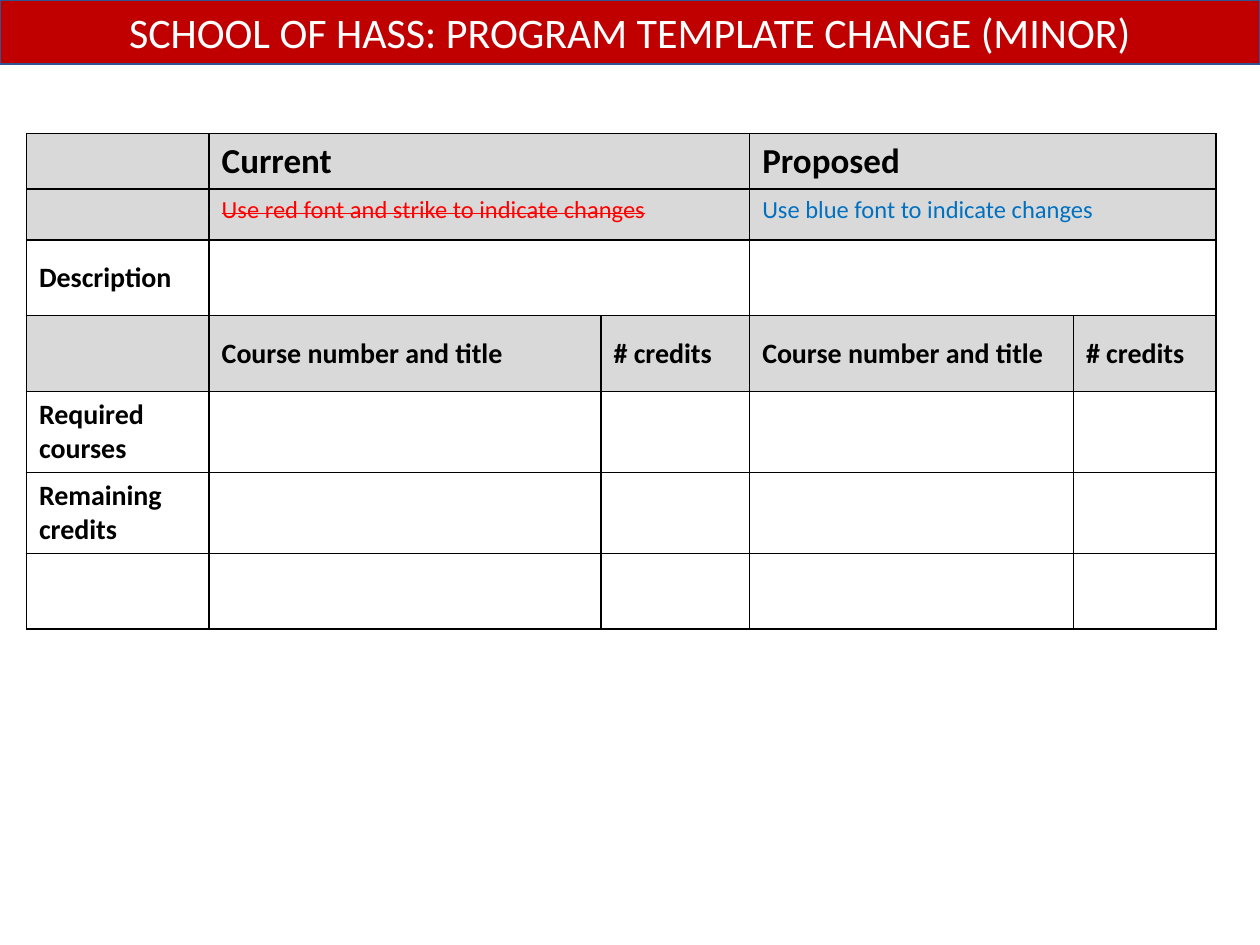
from pptx import Presentation
from pptx.dml.color import RGBColor
from pptx.enum.shapes import MSO_SHAPE as Shape
from pptx.enum.text import MSO_ANCHOR as Anchor, PP_ALIGN as Align
from pptx.oxml import parse_xml
from pptx.oxml.ns import nsdecls
from pptx.util import Inches, Pt

# Content
TITLE = "SCHOOL OF HASS: PROGRAM TEMPLATE CHANGE (MINOR)"
HEADS = ["Course number and title", "# credits"]
GRID = [
    ["", "Current", "", "Proposed", ""],
    ["", "Use red font and strike to indicate changes", "",
     "Use blue font to indicate changes", ""],
    ["Description", "", "", "", ""],
    ["", *HEADS, *HEADS],
    ["Required courses", "", "", "", ""],
    ["Remaining credits", "", "", "", ""],
    ["", "", "", "", ""],
]
COLS = [1.45, 3.11, 1.18, 2.57, 1.13]
ROWS = [0.43, 0.4] + [0.6] * 5
GREY_ROWS = {0, 1, 3}
WIDE_ROWS = {0, 1, 2}

# Text formats: a row's own, then a cell's own
BASE = {"name": "Calibri", "size": Pt(16), "bold": True}
ROW_FORM = {0: {"size": Pt(20)}, 1: {"size": Pt(14), "bold": False}}
INK = {(1, 1): "FF0000", (1, 3): "0070C0"}
STRUCK = {(1, 1)}


def paint(fill, ink):
    fill.solid()
    fill.fore_color.rgb = RGBColor.from_string(ink)


def write(frame, text, form, ink):
    run = frame.paragraphs[0].add_run()
    run.text = text
    for key, value in form.items():
        setattr(run.font, key, value)
    paint(run.font.fill, ink)
    return run


def edge(cell):
    props = cell._tc.get_or_add_tcPr()
    for side in "LRTB":
        props.append(parse_xml(
            f'<a:ln{side} w="12700" {nsdecls("a")}><a:solidFill>'
            f'<a:srgbClr val="000000"/></a:solidFill></a:ln{side}>'))


deck = Presentation()
deck.slide_width, deck.slide_height = Inches(10), Inches(7.5)
slide = deck.slides.add_slide(deck.slide_layouts[6])

# Table
table = slide.shapes.add_table(
    len(ROWS), len(COLS), Inches(0.21), Inches(1.06),
    Inches(sum(COLS)), Inches(sum(ROWS))).table
table.first_row = table.horz_banding = False
for col, width in zip(table.columns, COLS):
    col.width = Inches(width)
for row, height in zip(table.rows, ROWS):
    row.height = Inches(height)

for r, line in enumerate(GRID):
    for c, text in enumerate(line):
        cell = table.cell(r, c)
        edge(cell)
        if r in GREY_ROWS:
            paint(cell.fill, "D9D9D9")
        else:
            cell.fill.background()
        if r > 1:
            cell.vertical_anchor = Anchor.MIDDLE
        if text:
            run = write(cell.text_frame, text, BASE | ROW_FORM.get(r, {}),
                        INK.get((r, c), "000000"))
            if (r, c) in STRUCK:
                run._r.get_or_add_rPr().set("strike", "sngStrike")
    if r in WIDE_ROWS:
        for c in (1, 3):
            table.cell(r, c).merge(table.cell(r, c + 1))

# Title bar
bar = slide.shapes.add_shape(
    Shape.RECTANGLE, 0, 0, deck.slide_width, Inches(0.51))
bar.shadow.inherit = False
paint(bar.fill, "C00000")
paint(bar.line.fill, "325491")
bar.line.width = Pt(1)
bar.text_frame.word_wrap = True
bar.text_frame.vertical_anchor = Anchor.MIDDLE
bar.text_frame.paragraphs[0].alignment = Align.CENTER
write(bar.text_frame, TITLE, BASE | {"size": Pt(24), "bold": False}, "FFFFFF")

deck.save("out.pptx")
